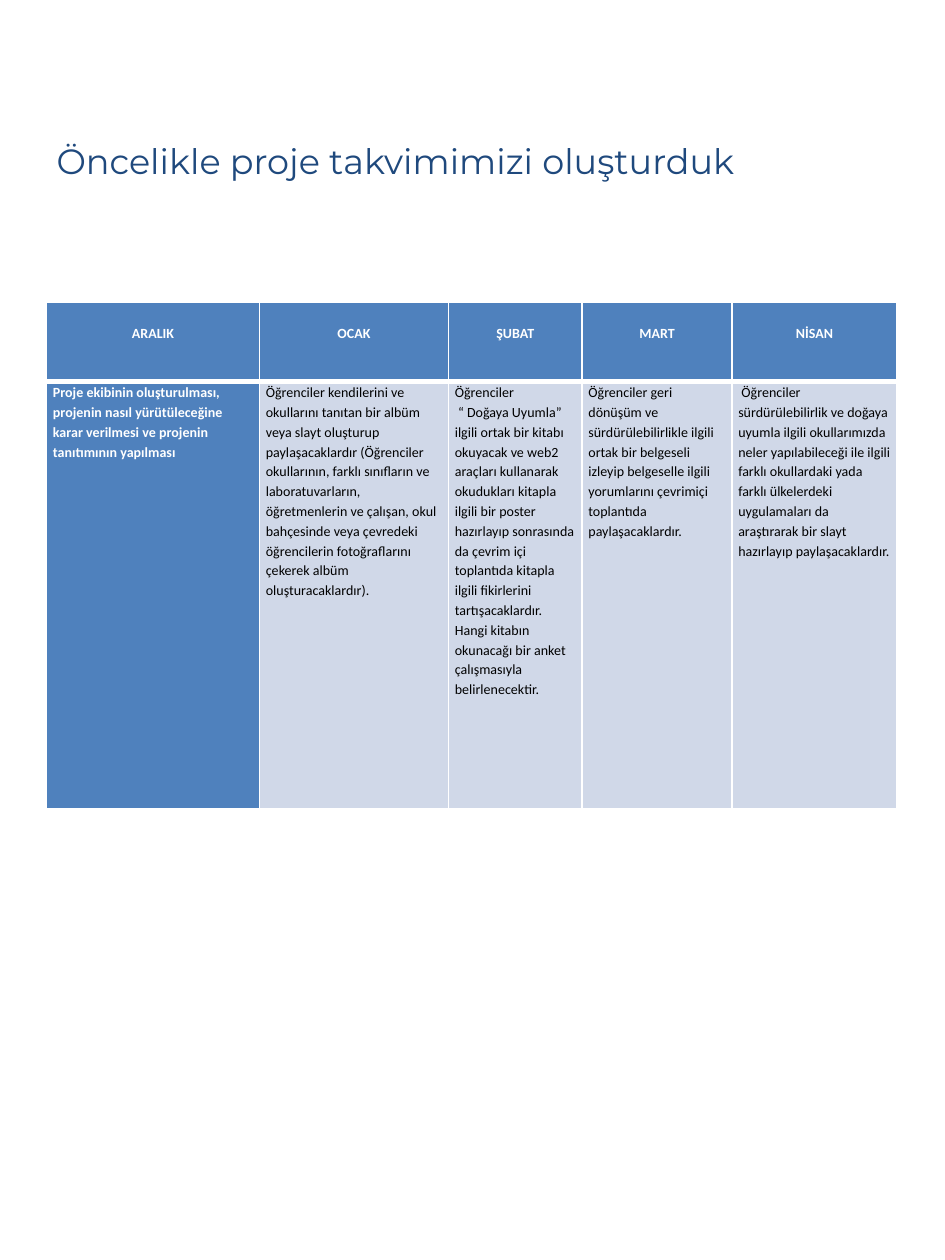
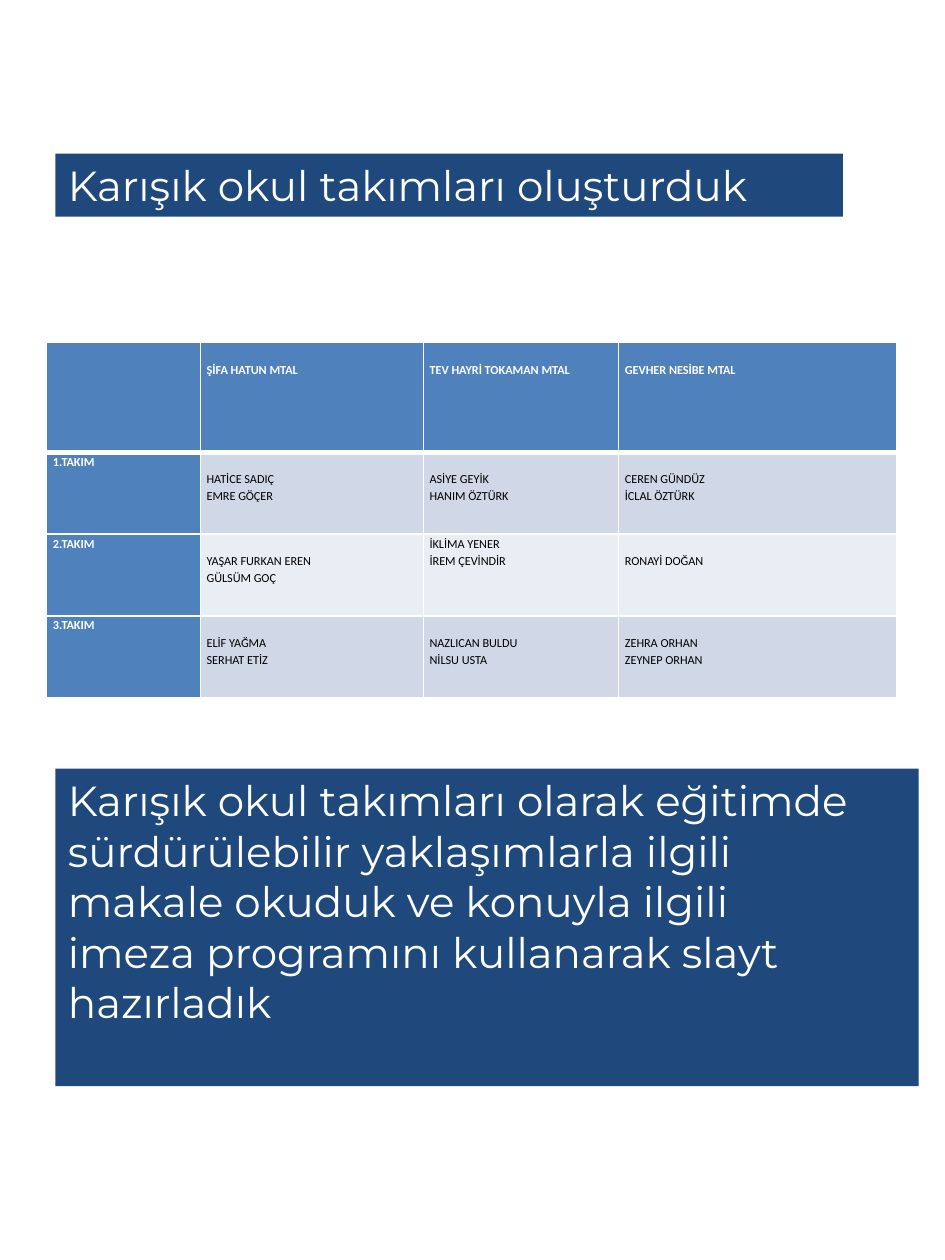
from dataclasses import dataclass
from typing import Optional

from lxml import etree
from pptx import Presentation
from pptx.dml.color import RGBColor
from pptx.enum import shapes, text
from pptx.oxml.ns import qn
from pptx.util import Inches, Pt

NAVY = RGBColor(0x1F, 0x49, 0x7D)
BLUE = RGBColor(0x4F, 0x81, 0xBD)
BAND_DARK = RGBColor(0xD0, 0xD8, 0xE8)
BAND_LIGHT = RGBColor(0xE9, 0xED, 0xF4)
WHITE = RGBColor(0xFF, 0xFF, 0xFF)
BLACK = RGBColor(0, 0, 0)

TITLE_FONT = "Montserrat"
TABLE_FONT = "Calibri"
TABLE_LEFT = 0.37
LINE_SPACING = 1.15


@dataclass(frozen=True)
class Cell:
    content: str = ""
    dropped: bool = False  # starts one line below the top of the cell


@dataclass(frozen=True)
class Grid:
    top: float
    widths: list[float]
    heights: list[float]
    size: int
    drop: float
    header_align: text.PP_ALIGN
    rows: list[list[Cell]]


@dataclass(frozen=True)
class Heading:
    content: str
    left: float
    top: float
    width: float
    height: float
    size: int
    color: RGBColor = WHITE
    fill: Optional[RGBColor] = NAVY


def dropped(*contents: str) -> list[Cell]:
    return [Cell(content, True) for content in contents]


CALENDAR_TITLE = Heading("Öncelikle proje takvimimizi oluşturduk",
                         0.35, 1.06, 6.85, 0.44, 20, NAVY, None)

CALENDAR = Grid(
    2.4, [1.69, 1.5, 1.06, 1.19, 1.31], [0.63, 3.39], 8, 0.16, text.PP_ALIGN.CENTER,
    [
        dropped("ARALIK", "OCAK", "ŞUBAT", "MART", "NİSAN"),
        [
            Cell("Proje ekibinin oluşturulması, projenin nasıl yürütüleceğine karar "
                 "verilmesi ve projenin tanıtımının yapılması"),
            Cell("Öğrenciler kendilerini ve okullarını tanıtan bir albüm veya slayt "
                 "oluşturup paylaşacaklardır (Öğrenciler okullarının, farklı sınıfların "
                 "ve laboratuvarların, öğretmenlerin ve çalışan, okul bahçesinde veya "
                 "çevredeki öğrencilerin fotoğraflarını çekerek albüm oluşturacaklardır)."),
            Cell("Öğrenciler\n “ Doğaya Uyumla” ilgili ortak bir kitabı okuyacak ve web2 "
                 "araçları kullanarak okudukları kitapla ilgili bir poster hazırlayıp "
                 "sonrasında da çevrim içi toplantıda kitapla ilgili fikirlerini "
                 "tartışacaklardır. Hangi kitabın okunacağı bir anket çalışmasıyla "
                 "belirlenecektir."),
            Cell("Öğrenciler geri dönüşüm ve sürdürülebilirlikle ilgili ortak bir "
                 "belgeseli izleyip belgeselle ilgili yorumlarını çevrimiçi toplantıda "
                 "paylaşacaklardır."),
            Cell(" Öğrenciler sürdürülebilirlik ve doğaya uyumla ilgili okullarımızda "
                 "neler yapılabileceği ile ilgili farklı okullardaki yada farklı "
                 "ülkelerdeki uygulamaları da araştırarak bir slayt hazırlayıp "
                 "paylaşacaklardır."),
        ],
    ],
)

TEAMS = Grid(
    2.72, [1.22, 1.77, 1.55, 2.21], [0.87] + [0.65] * 3, 7, 0.14, text.PP_ALIGN.LEFT,
    [
        [Cell(), *dropped("ŞİFA HATUN MTAL", "TEV HAYRİ TOKAMAN MTAL",
                          "GEVHER NESİBE MTAL")],
        [Cell("1.TAKIM"), *dropped("HATİCE SADIÇ\nEMRE GÖÇER",
                                   "ASİYE GEYİK\nHANIM ÖZTÜRK",
                                   "CEREN GÜNDÜZ\nİCLAL ÖZTÜRK")],
        [Cell("2.TAKIM"), Cell("YAŞAR FURKAN EREN\nGÜLSÜM GOÇ", True),
         Cell("İKLİMA YENER\nİREM ÇEVİNDİR"), Cell("RONAYİ DOĞAN", True)],
        [Cell("3.TAKIM"), *dropped("ELİF YAĞMA\nSERHAT ETİZ",
                                   "NAZLICAN BULDU\nNİLSU USTA",
                                   "ZEHRA ORHAN\nZEYNEP ORHAN")],
    ],
)

TEAM_HEADINGS = [
    Heading("Karışık okul takımları oluşturduk", 0.44, 1.22, 6.25, 0.5, 24),
    Heading("Karışık okul takımları olarak eğitimde\n"
            "sürdürülebilir yaklaşımlarla ilgili\n"
            "makale okuduk ve konuyla ilgili\n"
            "imeza programını kullanarak slayt\n"
            "hazırladık", 0.44, 6.1, 6.85, 2.52, 24),
]


def style_text(tf, font: str, size: int, color: RGBColor, bold: bool = False) -> None:
    for p in tf.paragraphs:
        for r in p.runs:
            r.font.name = font
            r.font.size = Pt(size)
            r.font.bold = bold
            r.font.color.rgb = color


def add_heading(s, heading: Heading) -> None:
    box = [Inches(v) for v in (heading.left, heading.top, heading.width, heading.height)]
    if heading.fill is None:
        sp = s.shapes.add_textbox(*box)
    else:
        sp = s.shapes.add_shape(shapes.MSO_SHAPE.RECTANGLE, *box)
        sp.shadow.inherit = False
        sp.fill.solid()
        sp.fill.fore_color.rgb = heading.fill
        sp.line.fill.background()
    tf = sp.text_frame
    tf.word_wrap = True
    tf.vertical_anchor = text.MSO_ANCHOR.TOP
    tf.text = heading.content
    for p in tf.paragraphs:
        p.alignment = text.PP_ALIGN.LEFT
    style_text(tf, TITLE_FONT, heading.size, heading.color)


def set_borders(cell, bottom: int) -> None:
    """Draw white cell borders, 1 pt but for the bottom one."""
    tc_pr = cell._tc.get_or_add_tcPr()
    for i, (tag, width) in enumerate({"lnL": 1, "lnR": 1, "lnT": 1, "lnB": bottom}.items()):
        ln = etree.Element(qn(f"a:{tag}"), w=str(Pt(width)))
        fill = etree.SubElement(ln, qn("a:solidFill"))
        etree.SubElement(fill, qn("a:srgbClr"), val=str(WHITE))
        tc_pr.insert(i, ln)


def add_grid(s, grid: Grid) -> None:
    frame = s.shapes.add_table(len(grid.heights), len(grid.widths),
                               Inches(TABLE_LEFT), Inches(grid.top),
                               Inches(sum(grid.widths)), Inches(sum(grid.heights)))
    table = frame.table
    table.horz_banding = False
    for column, width in zip(table.columns, grid.widths):
        column.width = Inches(width)
    for row, height in zip(table.rows, grid.heights):
        row.height = Inches(height)

    for i, row in enumerate(grid.rows):
        for j, item in enumerate(row):
            header = i == 0
            strong = header or j == 0
            cell = table.cell(i, j)
            cell.margin_left = cell.margin_right = Inches(0.05)
            cell.margin_top = Inches(grid.drop if item.dropped else 0)
            cell.margin_bottom = 0
            cell.fill.solid()
            cell.fill.fore_color.rgb = BLUE if strong else (BAND_LIGHT, BAND_DARK)[i % 2]
            set_borders(cell, bottom=3 if header else 1)
            tf = cell.text_frame
            tf.text = item.content
            for p in tf.paragraphs:
                p.line_spacing = LINE_SPACING
                p.alignment = grid.header_align if header else text.PP_ALIGN.LEFT
            style_text(tf, TABLE_FONT, grid.size, WHITE if strong else BLACK, strong)


def main() -> None:
    prs = Presentation()
    prs.slide_width, prs.slide_height = Inches(7.5), Inches(10)
    for grid, headings in ((CALENDAR, [CALENDAR_TITLE]), (TEAMS, TEAM_HEADINGS)):
        s = prs.slides.add_slide(prs.slide_layouts[6])
        add_grid(s, grid)
        for heading in headings:
            add_heading(s, heading)
    prs.save("out.pptx")


if __name__ == "__main__":
    main()
